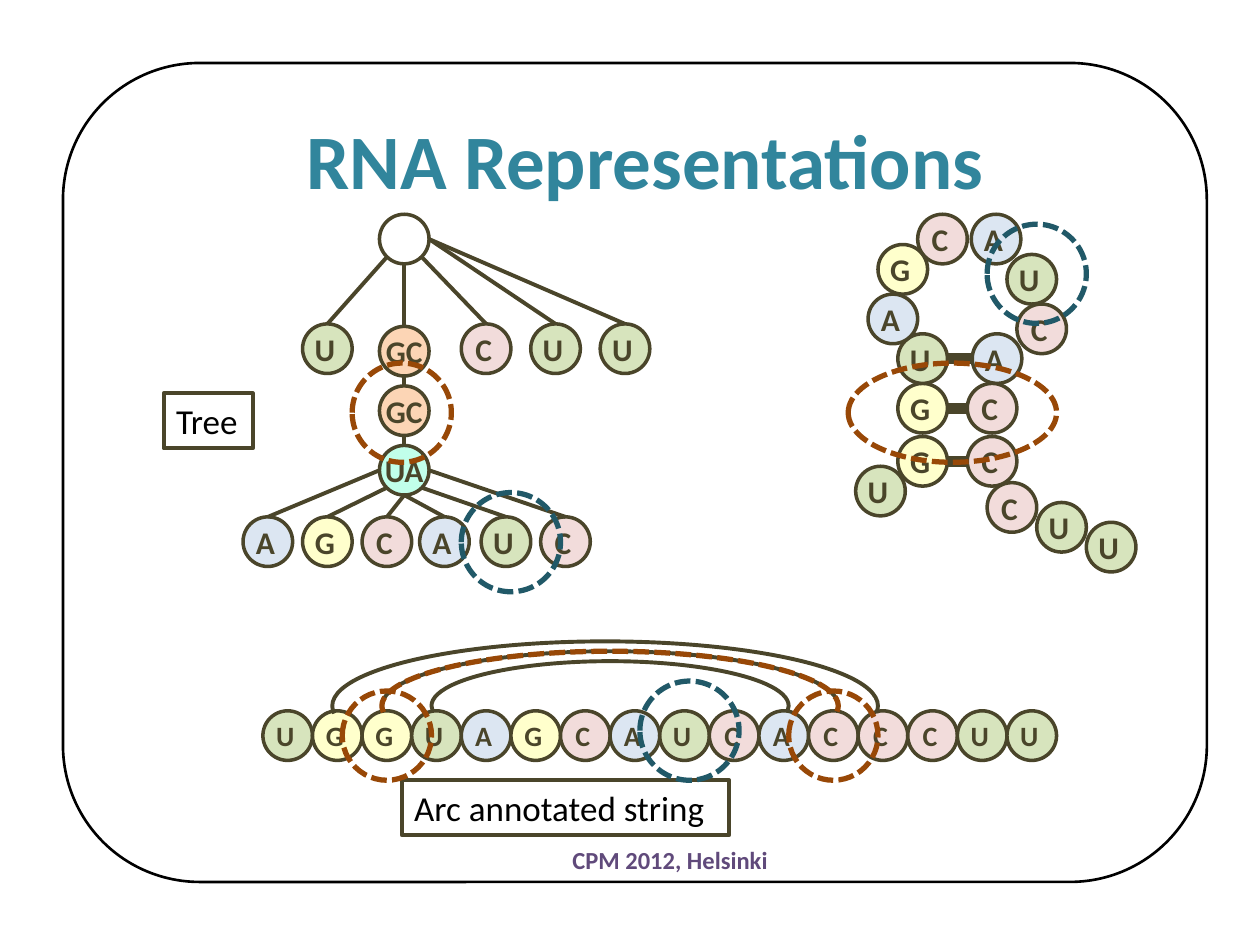
"""Build a slide that shows one RNA as a tree, a folded strand and an arc annotated string."""
import pptx
import pptx.util
import pptx.dml.color
import pptx.enum.dml
import pptx.enum.shapes
import pptx.enum.text
import pptx.oxml.ns
import lxml.etree

Cm = pptx.util.Cm
Pt = pptx.util.Pt
RGBColor = pptx.dml.color.RGBColor
KIND = pptx.enum.shapes.MSO_SHAPE
ALIGN = pptx.enum.text.PP_ALIGN
MIDDLE = pptx.enum.text.MSO_ANCHOR.MIDDLE

BLACK = RGBColor(0x00, 0x00, 0x00)
DARK = RGBColor(0x4A, 0x45, 0x2A)
BROWN = RGBColor(0x98, 0x48, 0x07)
TEAL = RGBColor(0x21, 0x59, 0x68)
AQUA = RGBColor(0x31, 0x85, 0x9C)
PURPLE = RGBColor(0x60, 0x4A, 0x7B)
GREEN = RGBColor(0xD7, 0xE4, 0xBD)
YELLOW = RGBColor(0xFF, 0xFF, 0xCC)
PINK = RGBColor(0xF2, 0xDC, 0xDB)
BLUE = RGBColor(0xDC, 0xE6, 0xF2)
ORANGE = RGBColor(0xFC, 0xD5, 0xB5)
MINT = RGBColor(0xC1, 0xFF, 0xEA)
FILLS = {"U": GREEN, "G": YELLOW, "C": PINK, "A": BLUE, "GC": ORANGE, "UA": MINT}

deck = pptx.Presentation()
deck.slide_width, deck.slide_height = Cm(25.4), Cm(19.05)
slide = deck.slides.add_slide(deck.slide_layouts[5])


def draw(home, kind, box, color, width, fill=None, text="", size=18, bold=True, ink=DARK):
    shape = home.add_shape(kind, *[Cm(side) for side in box])
    shape.shadow.inherit = False
    shape.line.color.rgb = color
    shape.line.width = Pt(width)
    if fill is None:
        shape.fill.background()
    else:
        shape.fill.solid()
        shape.fill.fore_color.rgb = fill
    if text:
        frame = shape.text_frame
        inset = Cm(0.1) if len(text) == 1 else 0
        form = {"margin_left": 0, "margin_top": 0, "margin_right": inset,
                "margin_bottom": 0, "word_wrap": False, "vertical_anchor": MIDDLE}
        for key, value in form.items():
            setattr(frame, key, value)
        write(frame, text, size, bold, ink)
    return shape


def write(frame, text, size, bold, ink):
    frame.text = text
    line = frame.paragraphs[0]
    line.alignment = ALIGN.CENTER
    font = line.runs[0].font
    for key, value in {"name": "Calibri", "size": Pt(size), "bold": bold}.items():
        setattr(font, key, value)
    font.color.rgb = ink


border = draw(slide.shapes, KIND.ROUNDED_RECTANGLE, (1.27, 1.27, 23.06, 16.51), BLACK, 1.5)
border.adjustments[0] = 0.167

title = slide.shapes.title
place = {"left": Cm(2.11), "top": Cm(2.13), "width": Cm(21.79), "height": Cm(2.13)}
for key, value in place.items():
    setattr(title, key, value)
title.text_frame.auto_size = pptx.enum.text.MSO_AUTO_SIZE.NONE
title.text_frame.vertical_anchor = MIDDLE
write(title.text_frame, "RNA Representations", 44, True, AQUA)

foot = slide.shapes.add_textbox(Cm(5.51), Cm(16.92), Cm(16), Cm(0.86))
foot.text_frame.word_wrap = True
write(foot.text_frame, "CPM 2012, Helsinki", 14, True, PURPLE)

string, tree, fold = [slide.shapes.add_group_shape().shapes for part in range(3)]

for step, base in enumerate("UGGUAGCAUCACCCUU"):
    draw(string, KIND.OVAL, (5.3 + step, 14.33, 1, 1), DARK, 2, FILLS[base], base, 16)

mid = (7.7, 13.13, 9.2, 2.2)
arcs = [(string, box, DARK, 2.25) for box in [(8.7, 13.33, 7.2, 1.8), mid, (6.7, 12.93, 11, 2.6)]]

upper = [("U", 6.1, 7.8, 5.18), ("C", 9.3, 8.5, 5.18), ("U", 10.7, 8.65, 4.82),
         ("U", 12.1, 8.65, 4.82)]
lower = [("A", 4.9, 7.65, 9.48), ("G", 6.1, 7.8, 9.83), ("C", 7.3, 8.15, 9.98),
         ("A", 8.46, 8.15, 9.98), ("U", 9.7, 8.5, 9.83), ("C", 10.9, 8.65, 9.48)]
links = [(tree, 8.15, start, 8.15, end, 2.25)
         for start, end in [(5.32, 6.58), (7.58, 7.78), (8.78, 8.98)]]
draw(tree, KIND.OVAL, (7.65, 4.32, 1, 1), DARK, 2)
for step, pair in enumerate(["GC", "GC", "UA"]):
    draw(tree, KIND.OVAL, (7.65, 6.58 + 1.2 * step, 1, 1), DARK, 2, FILLS[pair], pair)
for top, leaves in [(6.53, upper), (10.42, lower)]:
    for base, left, x, y in leaves:
        draw(tree, KIND.OVAL, (left, top, 1, 1), DARK, 2, FILLS[base], base)
        links.append((tree, x, y, left + 0.5, top, 2.25))

strand = [("U", 17.25, 9.4), ("G", 18.1, 8.8), ("G", 18.1, 7.73), ("U", 18.1, 6.73),
          ("A", 17.5, 5.93), ("G", 17.7, 4.93), ("C", 18.5, 4.32), ("A", 19.58, 4.32),
          ("U", 20.3, 5.13), ("C", 20.5, 6.13), ("A", 19.6, 6.73), ("C", 19.5, 7.73),
          ("C", 19.5, 8.8), ("C", 19.9, 9.73), ("U", 20.9, 10.13), ("U", 21.9, 10.53)]
for base, left, top in strand:
    draw(fold, KIND.OVAL, (left, top, 1, 1), DARK, 2, FILLS[base], base)
links += [(fold, 19.1, y, x, y, 6) for x, y in [(19.6, 7.23), (19.5, 8.23), (19.5, 9.3)]]

for home, left, top, right, base, width in links:
    link = home.add_connector(pptx.enum.shapes.MSO_CONNECTOR.STRAIGHT,
                              Cm(left), Cm(top), Cm(right), Cm(base))
    link.line.color.rgb = DARK
    link.line.width = Pt(width)
    lxml.etree.SubElement(link.element.spPr, pptx.oxml.ns.qn("a:effectLst"))

for text, box in [("Arc annotated string", (8.1, 15.73, 6.6, 1.11)),
                  ("Tree", (3.3, 7.93, 1.8, 1.11))]:
    label = draw(slide.shapes, KIND.RECTANGLE, box, DARK, 2.25, None, text, 20, False, BLACK)
    label.text_frame.margin_left = Cm(0.25)
    label.text_frame.paragraphs[0].alignment = ALIGN.LEFT

marks = slide.shapes.add_group_shape().shapes
arcs.append((marks, mid, BROWN, 3))
for home, box, color, width in arcs:
    arc = draw(home, KIND.ARC, box, color, width)
    arc.adjustments[0], arc.adjustments[1] = 107.03, 0.88
    if color == BROWN:
        arc.line.dash_style = pptx.enum.dml.MSO_LINE.SQUARE_DOT

rings = [(marks, 15.9, 13.93, 1.8, 1.8, BROWN), (marks, 6.9, 13.93, 1.8, 1.8, BROWN),
         (slide.shapes, 17.1, 7.32, 4.2, 2, BROWN), (slide.shapes, 7.1, 7.32, 2, 2, BROWN)]
rings += [(slide.shapes, left, top, 2, 2, TEAL)
          for left, top in [(19.9, 4.52), (12.9, 13.73), (9.3, 9.93)]]
for home, left, top, width, height, color in rings:
    ring = draw(home, KIND.OVAL, (left, top, width, height), color, 3)
    ring.line.dash_style = pptx.enum.dml.MSO_LINE.SQUARE_DOT

deck.save("out.pptx")
